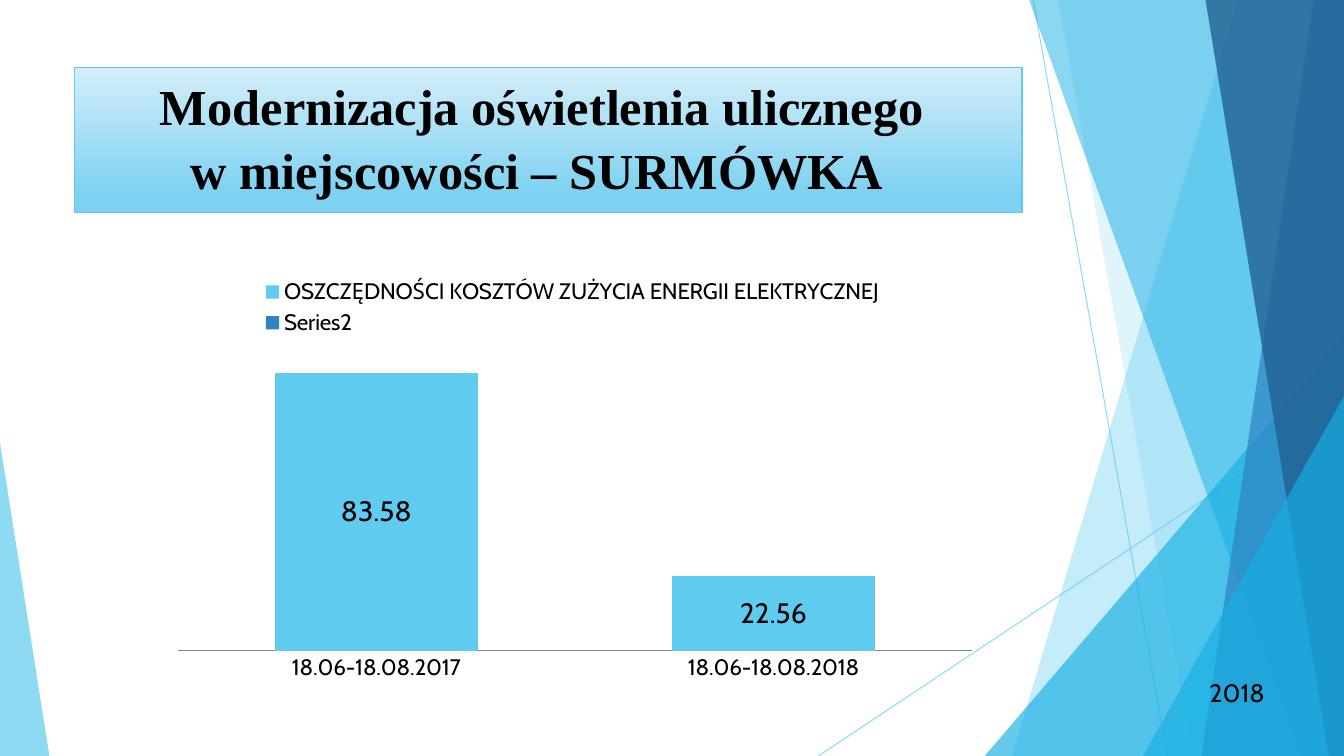
from lxml import etree
from pptx import Presentation
from pptx import oxml
from pptx.chart import data
from pptx.dml import color as dml
from pptx.enum import chart as charts
from pptx.enum import shapes, text
from pptx.oxml import ns
from pptx.util import Pt

WIDTH, HEIGHT = 960, 540
SKY, CYAN, BLUE, NAVY = "5FCBEF", "17B0E4", "2E83C3", "226292"


def rgb(value):
    return dml.RGBColor.from_string(value)


def format_font(font, size, name="Cabin", colour="000000", bold=False):
    font.size, font.name, font.bold = Pt(size), name, bold
    font.color.rgb = rgb(colour)


def write(frame, words, align=text.PP_ALIGN.LEFT, spacing=1.0, **font):
    frame.word_wrap = True
    frame.vertical_anchor = text.MSO_ANCHOR.TOP
    paragraph = frame.paragraphs[0]
    paragraph.text = words
    paragraph.alignment, paragraph.line_spacing = align, spacing
    for run in paragraph.runs:
        format_font(run.font, **font)


def set_opacity(shape, percent):
    for colour in shape.element.spPr.iter(ns.qn("a:srgbClr")):
        etree.SubElement(colour, ns.qn("a:alpha"), val=str(percent * 1000))


class SlideBuilder:
    def __init__(self, presentation):
        self.slide = presentation.slides.add_slide(presentation.slide_layouts[5])
        self.shapes = self.slide.shapes

    def paint(self, shape, colour, opacity):
        shape.shadow.inherit = False
        shape.fill.solid()
        shape.fill.fore_color.rgb = rgb(colour)
        shape.line.fill.background()
        set_opacity(shape, opacity)

    def line(self, *ends):
        line = self.shapes.add_connector(shapes.MSO_CONNECTOR.STRAIGHT, *map(Pt, ends))
        line.line.color.rgb = rgb(SKY)
        line.line.width = Pt(0.75)
        set_opacity(line, 70)
        etree.SubElement(line.element.spPr, ns.qn("a:effectLst"))

    def band(self, top_left, bottom_left, colour, opacity):
        """Band from a slanted left edge to the right side of the slide."""
        builder = self.shapes.build_freeform(Pt(top_left), 0)
        corners = [(WIDTH, 0), (WIDTH, HEIGHT), (bottom_left, HEIGHT)]
        builder.add_line_segments([(Pt(x), Pt(y)) for x, y in corners], close=True)
        self.paint(builder.convert_to_shape(), colour, opacity)

    def triangle(self, left, top, width, apex, colour, opacity):
        box = map(Pt, (left, top, width, HEIGHT - top))
        triangle = self.shapes.add_shape(shapes.MSO_SHAPE.ISOSCELES_TRIANGLE, *box)
        triangle.adjustments[0] = apex
        self.paint(triangle, colour, opacity)

    def title(self, words, left, top, width, height):
        title = self.shapes.title
        title.left, title.top, title.width, title.height = map(Pt, (left, top, width, height))
        title.fill.gradient()
        title.fill.gradient_angle = 270
        stops = ((0, "D4EEF9"), (0.88, "7DD1F1"))
        for stop, (position, colour) in zip(title.fill.gradient_stops, stops):
            stop.position, stop.color.rgb = position, rgb(colour)
        title.line.color.rgb = rgb(SKY)
        title.line.width = Pt(1)
        title.text_frame.auto_size = text.MSO_AUTO_SIZE.NONE
        write(title.text_frame, words, align=text.PP_ALIGN.CENTER, spacing=1.05,
              size=36, name="Times New Roman", bold=True)
        title.element.getparent().append(title.element)  # in front of the bands

    def label(self, words, left, top, width, height, size):
        box = self.shapes.add_textbox(*map(Pt, (left, top, width, height)))
        write(box.text_frame, words, size=size)

    def stacked_columns(self, categories, series, left, top, width, height):
        chart_data = data.CategoryChartData()
        chart_data.categories = categories
        for name, values, _ in series:
            chart_data.add_series(name, values)
        chart = self.shapes.add_chart(
            charts.XL_CHART_TYPE.COLUMN_STACKED,
            *map(Pt, (left, top, width, height)), chart_data).chart
        format_font(chart.font, 10)
        chart.has_title = False

        # Legend and axes
        chart.has_legend = True
        chart.legend.position = charts.XL_LEGEND_POSITION.TOP
        chart.legend.include_in_layout = False
        format_font(chart.legend.font, 16)
        axis = chart.category_axis
        axis.major_tick_mark = charts.XL_TICK_MARK.NONE
        axis.format.line.color.rgb = rgb("868686")
        format_font(axis.tick_labels.font, 16)
        chart.value_axis.visible = False
        chart.value_axis.has_major_gridlines = False
        chart.value_axis.minimum_scale = 0
        chart.value_axis.maximum_scale = 90

        # Columns and their values
        plot = chart.plots[0]
        plot.gap_width, plot.overlap, plot.vary_by_categories = 95, 100, False
        for column, (_, _, colour) in zip(plot.series, series):
            column.format.fill.solid()
            column.format.fill.fore_color.rgb = rgb(colour)
            column.data_labels.show_value = True
            format_font(column.data_labels.font, 20)

        # Place of the plot inside the chart
        area = next(chart.element.iter(ns.qn("c:plotArea")))
        for layout in area.findall(ns.qn("c:layout")):
            area.remove(layout)
        area.insert(0, oxml.parse_xml(
            f'<c:layout {ns.nsdecls("c")}><c:manualLayout><c:layoutTarget val="inner"/>'
            '<c:xMode val="edge"/><c:yMode val="edge"/><c:x val="0.02"/><c:y val="0.2"/>'
            '<c:w val="0.96"/><c:h val="0.71"/></c:manualLayout></c:layout>'))


def main():
    presentation = Presentation()
    presentation.slide_width, presentation.slide_height = Pt(WIDTH), Pt(HEIGHT)
    page = SlideBuilder(presentation)

    # Background facets, from back to front
    page.line(738, 0, 833.8, HEIGHT)
    page.line(WIDTH, 290.2, 584.6, HEIGHT)
    page.band(884.2, 722.9, SKY, 36)
    page.band(756, 851.8, SKY, 20)
    page.triangle(703.4, 239.8, 256.6, 1, CYAN, 66)
    page.band(735.1, 929.5, CYAN, 50)
    page.band(938.2, 858.2, BLUE, 70)
    page.band(861.1, 949, NAVY, 80)
    page.triangle(816.5, 283, 143.5, 1, CYAN, 66)
    page.triangle(0, 316.1, 35.3, 0, SKY, 70)

    # Title and year
    page.title("Modernizacja oświetlenia ulicznego \vw miejscowości – SURMÓWKA  ",
               53.3, 48.2, 676.8, 103.7)
    page.label("2018", 856.8, 480.2, 89.3, 28.8, size=18)

    # Energy cost chart
    page.stacked_columns(
        ["18.06-18.08.2017", "18.06-18.08.2018"],
        [("OSZCZĘDNOŚCI KOSZTÓW ZUŻYCIA ENERGII ELEKTRYCZNEJ ", (83.58, 22.56), SKY),
         ("Series2", (None, None), BLUE)],
        115.2, 190.8, 591.1, 301)

    presentation.save("out.pptx")


if __name__ == "__main__":
    main()
